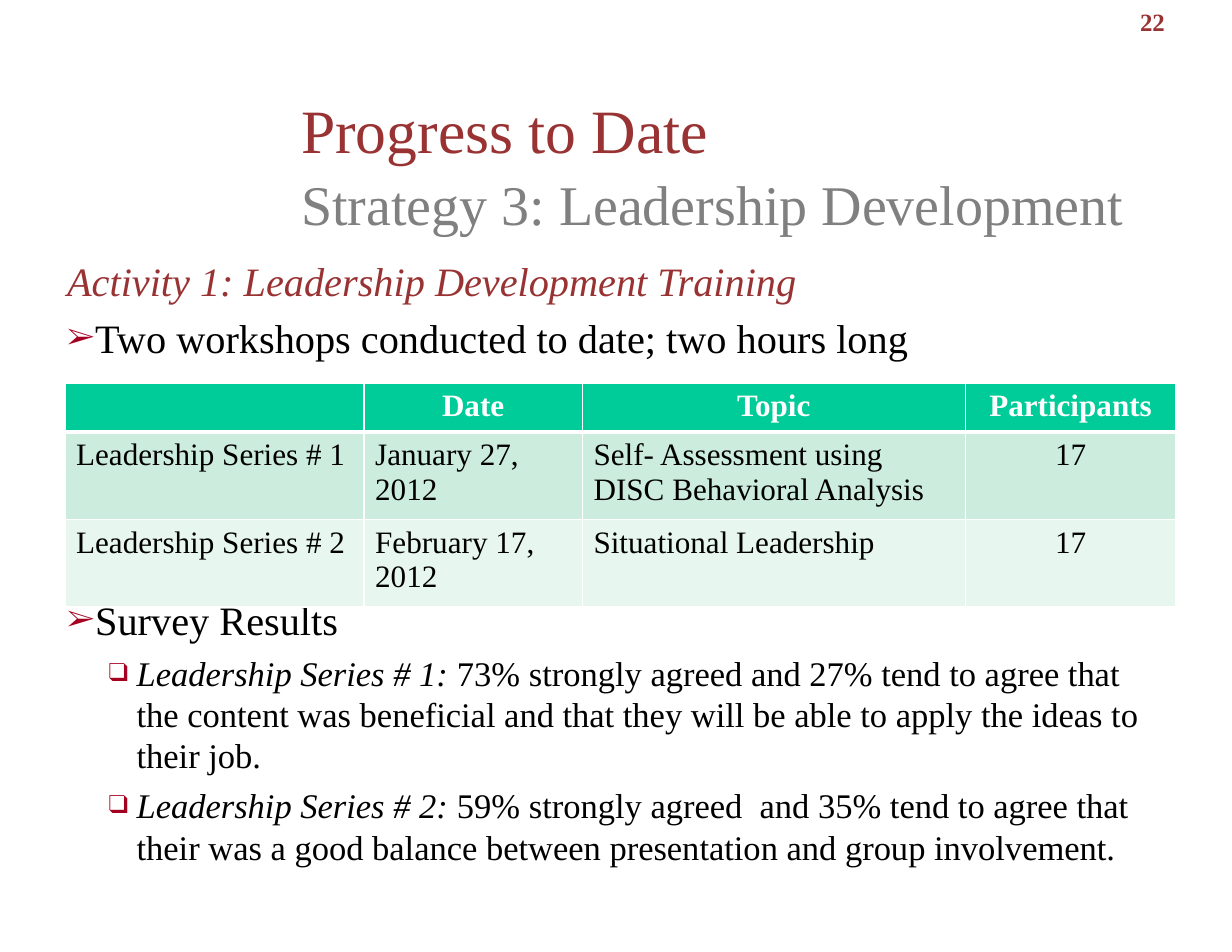
from lxml import etree
from pptx import Presentation
from pptx import util as u
from pptx.dml.color import RGBColor
from pptx.enum import text
from pptx.oxml import ns

COLORS = {"title": "993333", "subtitle": "808080", "body": "000000", "bullet": "A50021",
          "white": "FFFFFF", "header": "00CC99", "odd": "CCECDE", "even": "E7F6EF"}


class SlideBuilder:
    """Holds the deck, its style and the current slide."""

    font = "Times New Roman"

    def __init__(self, width, height):
        self.deck = Presentation()
        self.deck.slide_width, self.deck.slide_height = u.Inches(width), u.Inches(height)
        self.page = self.deck.slides.add_slide(self.deck.slide_layouts[5])

    def style(self, span, size, color, bold=False, italic=False):
        """Format one run."""
        span.font.name, span.font.size = self.font, u.Pt(size)
        span.font.bold, span.font.italic = bold, italic
        span.font.color.rgb = RGBColor.from_string(COLORS[color])

    def frame(self, box, place, insets):
        """Place a box and prepare its text frame."""
        box.left, box.top, box.width, box.height = map(u.Inches, place)
        frame = box.text_frame
        frame.word_wrap, frame.auto_size = True, text.MSO_AUTO_SIZE.NONE
        (frame.margin_left, frame.margin_top,
         frame.margin_right, frame.margin_bottom) = map(u.Inches, insets)
        return frame

    def title(self, place, heading, subheading):
        """Fill the title with a heading and a smaller second line."""
        frame = self.frame(self.page.shapes.title, place, (0.11, 0.06, 0.11, 0.06))
        frame.vertical_anchor = text.MSO_ANCHOR.MIDDLE
        frame.text = f"{heading}\v{subheading}"
        para = frame.paragraphs[0]
        para.alignment, para.line_spacing = text.PP_ALIGN.LEFT, u.Pt(45)
        first, second = para.runs
        self.style(first, 39.6, "title")
        self.style(second, 36, "subtitle")

    def text_box(self, place, insets):
        """Add an empty text box and return its frame."""
        return self.frame(self.page.shapes.add_textbox(0, 0, 0, 0), place, insets)

    def page_number(self, place, number):
        """Add the centred page number."""
        para = self.text_box(place, (0.11, 0.06, 0.11, 0.06)).paragraphs[0]
        para.text = number
        para.alignment = text.PP_ALIGN.CENTER
        self.style(para.runs[0], 16, "title", bold=True)

    def bullet(self, properties, mark):
        """Add a coloured bullet, or none, to paragraph properties."""
        if not mark:
            etree.SubElement(properties, ns.qn("a:buNone"))
            return
        color = etree.SubElement(properties, ns.qn("a:buClr"))
        etree.SubElement(color, ns.qn("a:srgbClr"), val=COLORS["bullet"])
        etree.SubElement(properties, ns.qn("a:buSzPct"), val="75000")
        etree.SubElement(properties, ns.qn("a:buFont"), typeface=self.font)
        etree.SubElement(properties, ns.qn("a:buChar"), char=mark)

    def outline(self, place, items):
        """Add an outline of (level, mark, space before, spans) items."""
        frame = self.text_box(place, (0.05, 0.02, 0.02, 0.02))
        for index, (level, mark, space, spans) in enumerate(items):
            para = frame.add_paragraph() if index else frame.paragraphs[0]
            para.level = level
            properties = para._p.get_or_add_pPr()
            properties.set("marL", str(u.Inches((0.25, 0.62)[level])))
            properties.set("indent", str(u.Inches(-0.25)))
            self.bullet(properties, mark)
            para.line_spacing = u.Pt((31, 26.6)[level])
            para.space_before = u.Pt(space)
            for words, color, italic in spans:
                span = para.add_run()
                span.text = words
                self.style(span, (25.9, 22.2)[level], color, italic=italic)

    def borders(self, cell, top, bottom):
        """Draw white cell borders, in points."""
        properties = cell._tc.get_or_add_tcPr()
        widths = {"lnL": 1, "lnR": 1, "lnT": top, "lnB": bottom}
        for index, (side, width) in enumerate(widths.items()):
            line = etree.Element(ns.qn(f"a:{side}"), w=str(u.Pt(width)))
            fill = etree.SubElement(line, ns.qn("a:solidFill"))
            etree.SubElement(fill, ns.qn("a:srgbClr"), val=COLORS["white"])
            properties.insert(index, line)

    def table(self, left, top, widths, heights, rows):
        """Add a table with a header row and shaded body rows."""
        place = map(u.Inches, (left, top, sum(widths), sum(heights)))
        table = self.page.shapes.add_table(len(rows), len(widths), *place).table
        for column, width in zip(table.columns, widths):
            column.width = u.Inches(width)
        for row, height in zip(table.rows, heights):
            row.height = u.Inches(height)
        for r, values in enumerate(rows):
            header = r == 0
            shade = "header" if header else ("even", "odd")[r % 2]
            for c, value in enumerate(values):
                cell = table.cell(r, c)
                cell.fill.solid()
                cell.fill.fore_color.rgb = RGBColor.from_string(COLORS[shade])
                self.borders(cell, 3 if r == 1 else 1, 3 if header else 1)
                para = cell.text_frame.paragraphs[0]
                para.text = value
                if header or c == len(widths) - 1:
                    para.alignment = text.PP_ALIGN.CENTER
                for span in para.runs:
                    self.style(span, 20, "white" if header else "body", bold=header)


def main():
    """Build the progress slide."""
    builder = SlideBuilder(11, 8.5)
    builder.title((2.58, 1.06, 7.78, 0.85), "Progress to Date",
                  "Strategy 3: Leadership Development")
    builder.outline((0.55, 2.27, 9.9, 5.79), [
        (0, None, 0, [("Activity 1: Leadership Development Training", "title", True)]),
        (0, "➢", 5.5, [("Two workshops conducted to date; two hours long", "body", False)]),
        (0, "➢", 150, [("Survey Results", "body", False)]),
        (1, "❑", 5.5, [
            ("Leadership Series # 1: ", "body", True),
            ("73% strongly agreed and 27% tend to agree that the content was beneficial "
             "and that they will be able to apply the ideas to their job.", "body", False)]),
        (1, "❑", 5.5, [
            ("Leadership Series # 2: ", "body", True),
            ("59% strongly agreed  and 35% tend to agree that their was a good balance "
             "between presentation and group involvement.", "body", False)]),
    ])
    builder.page_number((9.83, 0, 0.92, 0.45), "22")
    builder.table(0.58, 3.42, (2.67, 1.95, 3.42, 1.88), (0.44, 0.78, 0.78), [
        ("", "Date", "Topic", "Participants"),
        ("Leadership Series # 1", "January 27, 2012",
         "Self- Assessment using DISC Behavioral Analysis", "17"),
        ("Leadership Series # 2", "February 17, 2012", "Situational Leadership", "17"),
    ])
    builder.deck.save("out.pptx")


if __name__ == "__main__":
    main()
